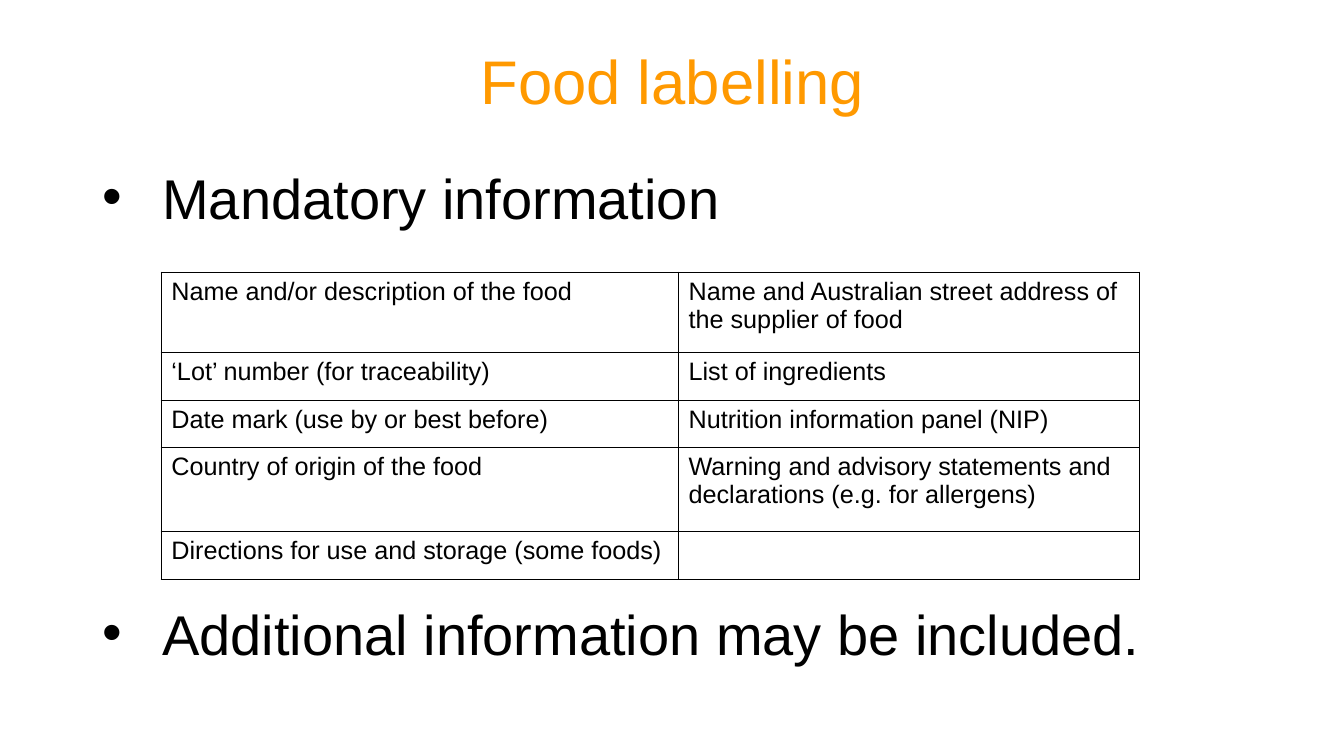
from dataclasses import dataclass

from lxml.etree import SubElement
from pptx import Presentation
from pptx.dml.color import RGBColor
from pptx.enum.text import MSO_ANCHOR, MSO_AUTO_SIZE, PP_ALIGN
from pptx.oxml.ns import qn
from pptx.util import Pt

PX = 9144


@dataclass(frozen=True)
class Theme:
    """Colours, font and type sizes of the slide."""
    font: str = "Arial"
    accent: str = "FF9900"
    ink: str = "000000"
    paper: str = "FFFFFF"
    title: int = 44
    body: int = 40
    table: int = 18
    border: int = 1


THEME = Theme()
BULLETS = ["Mandatory information", "Additional information may be included."]
ROW_HEIGHTS = [80, 47, 47, 83, 48]
COLUMN_WIDTHS = [513, 457]
LABEL_ITEMS = [
    ("Name and/or description of the food",
     "Name and Australian street address of the supplier of food"),
    ("‘Lot’ number (for traceability)", "List of ingredients"),
    ("Date mark (use by or best before)", "Nutrition information panel (NIP)"),
    ("Country of origin of the food",
     "Warning and advisory statements and declarations (e.g. for allergens)"),
    ("Directions for use and storage (some foods)", ""),
]


def add_run(p, text, size, color):
    """Add one run in the theme font."""
    r = p.add_run()
    r.text = text
    r.font.name = THEME.font
    r.font.size = Pt(size)
    r.font.color.rgb = RGBColor.from_string(color)


def place(sp, box):
    """Move a placeholder to a box in px and return its text frame."""
    sp.left, sp.top, sp.width, sp.height = (v * PX for v in box)
    tf = sp.text_frame
    tf.word_wrap = True
    tf.auto_size = MSO_AUTO_SIZE.NONE
    return tf


def fill_title(sp, box, text):
    """Place the centred title."""
    tf = place(sp, box)
    tf.vertical_anchor = MSO_ANCHOR.MIDDLE
    p = tf.paragraphs[0]
    p.alignment = PP_ALIGN.CENTER
    p.line_spacing = 0.9
    add_run(p, text, THEME.title, THEME.accent)


def fill_body(sp, box, bullets, gap):
    """Place the bullets, with a gap in points between them."""
    tf = place(sp, box)
    tf.vertical_anchor = MSO_ANCHOR.TOP
    for i, text in enumerate(bullets):
        p = tf.add_paragraph() if i else tf.paragraphs[0]
        p.line_spacing = 0.8
        p.space_before = Pt(gap if i else 0)
        p.space_after = Pt(0)
        pPr = p._p.get_or_add_pPr()
        pPr.set("marL", str(59 * PX))
        pPr.set("indent", str(-59 * PX))
        SubElement(pPr, qn("a:buFont"), typeface=THEME.font)
        SubElement(pPr, qn("a:buChar"), char="•")
        add_run(p, text, THEME.body, THEME.ink)


def format_cell(cell):
    """Give a cell plain borders and a plain fill."""
    tcPr = cell._tc.get_or_add_tcPr()
    for side in ("lnL", "lnR", "lnT", "lnB"):
        ln = SubElement(tcPr, qn(f"a:{side}"), w=str(Pt(THEME.border)))
        fill = SubElement(ln, qn("a:solidFill"))
        SubElement(fill, qn("a:srgbClr"), val=THEME.ink)
    cell.fill.solid()
    cell.fill.fore_color.rgb = RGBColor.from_string(THEME.paper)


def add_label_table(s, left, top):
    """Add the table of mandatory label items."""
    table = s.shapes.add_table(
        len(ROW_HEIGHTS), len(COLUMN_WIDTHS), left * PX, top * PX,
        sum(COLUMN_WIDTHS) * PX, sum(ROW_HEIGHTS) * PX).table
    table.first_row = table.horz_banding = False
    for column, width in zip(table.columns, COLUMN_WIDTHS):
        column.width = width * PX
    for row, height, items in zip(table.rows, ROW_HEIGHTS, LABEL_ITEMS):
        row.height = height * PX
        for cell, text in zip(row.cells, items):
            format_cell(cell)
            if text:
                add_run(cell.text_frame.paragraphs[0], text,
                        THEME.table, THEME.ink)


def add_labelling_slide(prs):
    """Build the food labelling slide."""
    s = prs.slides.add_slide(prs.slide_layouts[1])
    s.background.fill.solid()
    s.background.fill.fore_color.rgb = RGBColor.from_string(THEME.paper)
    fill_title(s.shapes.title, (92, 11, 1150, 145), "Food labelling")
    fill_body(s.placeholders[1], (92, 170, 1150, 539), BULLETS, 273)
    add_label_table(s, 160, 270)


def main():
    """Create and save the presentation."""
    prs = Presentation()
    prs.slide_width, prs.slide_height = 1333 * PX, 750 * PX
    add_labelling_slide(prs)
    prs.save("out.pptx")


if __name__ == "__main__":
    main()
